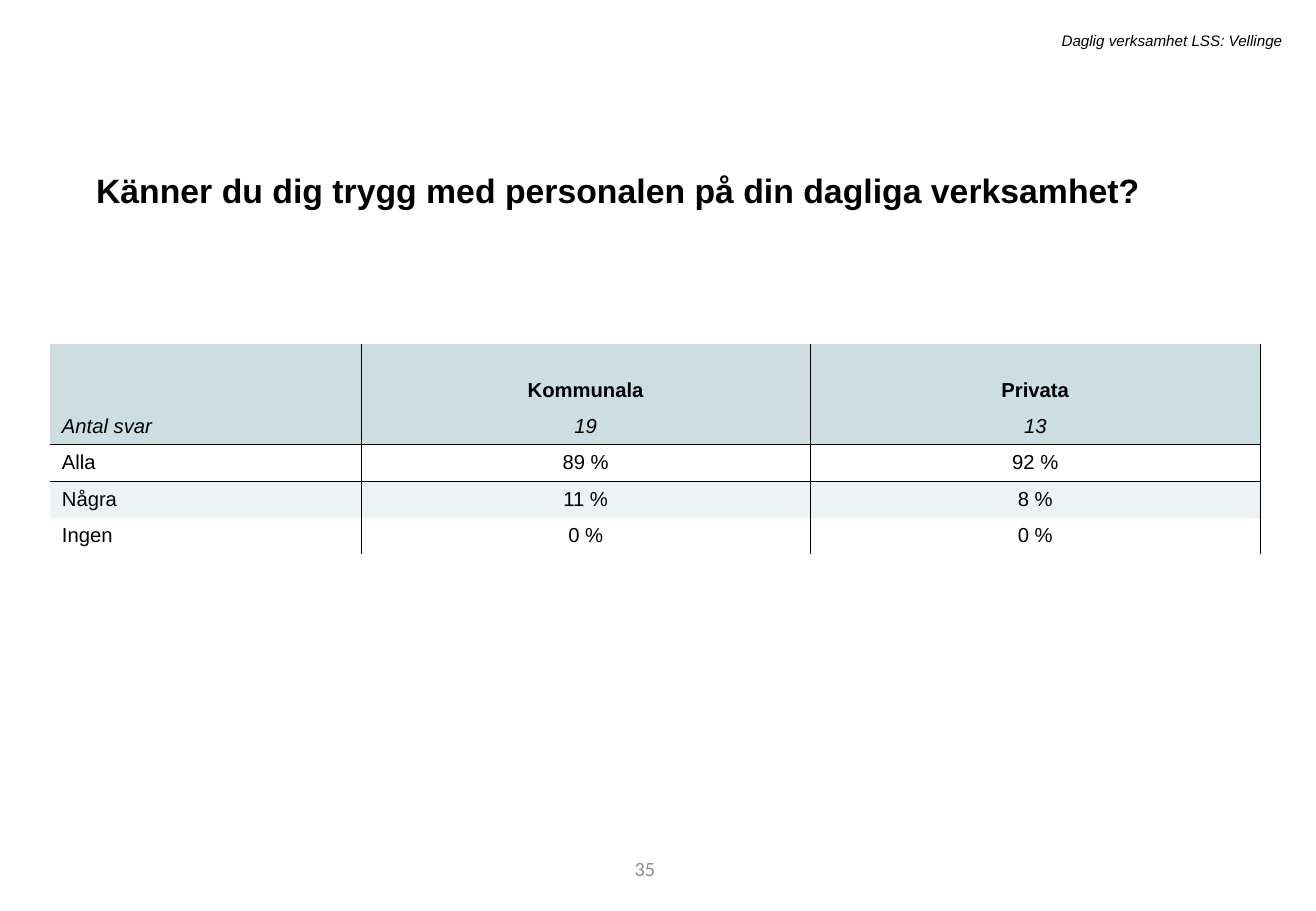
from lxml import etree
from pptx import Presentation
from pptx.dml.color import RGBColor
from pptx.enum.text import MSO_ANCHOR, PP_ALIGN
from pptx.oxml.ns import qn
from pptx.util import Inches, Pt

LEFT, CENTER, RIGHT = PP_ALIGN.LEFT, PP_ALIGN.CENTER, PP_ALIGN.RIGHT
TOP, MIDDLE, BOTTOM = MSO_ANCHOR.TOP, MSO_ANCHOR.MIDDLE, MSO_ANCHOR.BOTTOM
TITLE_ONLY = 5
PLAIN_TABLE_STYLE = "{2D5ABB26-0587-4C30-8999-92F81FD0307C}"
COLORS = {"text": "000000", "number": "8C8C8C", "header": "CCDEE1", "band": "EDF3F4"}

COLUMN_WIDTHS = [2.56, 3.7, 3.7]
ROW_HEIGHTS = [0.23, 0.3, 0.3, 0.3, 0.3, 0.3]
HEADING_ROW, COUNT_ROW = 1, 2
ROW_FILLS = ["header", "header", "header", None, "band", None]
ANSWERS = [
    ["", "", ""],
    ["", "Kommunala", "Privata"],
    ["Antal svar", "19", "13"],
    ["Alla", "89 %", "92 %"],
    ["Några", "11 %", "8 %"],
    ["Ingen", "0 %", "0 %"],
]


def add_span(para, text, size, font="Arial", color="text", bold=False, italic=False):
    """Add one formatted run to a paragraph."""
    span = para.add_run()
    span.text = text
    span.font.name = font
    span.font.size = Pt(size)
    span.font.bold = bold
    span.font.italic = italic
    span.font.color.rgb = RGBColor.from_string(COLORS[color])


def add_label(page, text, left, top, width, height, size, anchor=TOP, **style):
    """Add a right-aligned text box of one line."""
    box = page.shapes.add_textbox(Inches(left), Inches(top), Inches(width), Inches(height))
    box.text_frame.word_wrap = True
    box.text_frame.vertical_anchor = anchor
    para = box.text_frame.paragraphs[0]
    para.alignment = RIGHT
    add_span(para, text, size, **style)


def set_title(page, text):
    """Place the question in the title placeholder."""
    title = page.shapes.title
    title.left, title.top = Inches(0.69), Inches(1.28)
    title.width, title.height = Inches(9.4), Inches(0.47)
    title.text_frame.word_wrap = True
    title.text_frame.vertical_anchor = TOP
    para = title.text_frame.paragraphs[0]
    para.alignment = LEFT
    para.line_spacing = 1.2
    para.space_before = Pt(10)
    add_span(para, text, 20, bold=True)


def add_border(cell, side):
    """Draw a hairline on one side of a cell."""
    line = etree.SubElement(cell._tc.get_or_add_tcPr(), qn(f"a:ln{side}"), w=str(Pt(0.25)))
    fill = etree.SubElement(line, qn("a:solidFill"))
    etree.SubElement(fill, qn("a:srgbClr"), val=COLORS["text"])


def fill_cell(cell, text, row, column):
    """Format one table cell by its row and column."""
    if column > 0:
        add_border(cell, "L")
    add_border(cell, "R")
    if row == COUNT_ROW + 1:
        add_border(cell, "T")
    if row == COUNT_ROW:
        add_border(cell, "B")
    if ROW_FILLS[row]:
        cell.fill.solid()
        cell.fill.fore_color.rgb = RGBColor.from_string(COLORS[ROW_FILLS[row]])
    else:
        cell.fill.background()
    cell.margin_top = cell.margin_bottom = Inches(0.05 if text else 0)
    cell.vertical_anchor = BOTTOM if row == HEADING_ROW else MIDDLE
    para = cell.text_frame.paragraphs[0]
    para.alignment = CENTER if column else LEFT
    if text:
        add_span(para, text, 12, bold=row == HEADING_ROW, italic=row == COUNT_ROW)
    else:
        etree.SubElement(para._p, qn("a:endParaRPr"), sz="1200")


def add_answer_table(page):
    """Add the table of answers by type of provider."""
    frame = page.shapes.add_table(
        len(ANSWERS), len(COLUMN_WIDTHS), Inches(0.41), Inches(2.83),
        Inches(sum(COLUMN_WIDTHS)), Inches(sum(ROW_HEIGHTS)))
    table = frame.table
    table.first_row = table.horz_banding = False
    table._tbl.tblPr.find(qn("a:tableStyleId")).text = PLAIN_TABLE_STYLE
    for column, width in zip(table.columns, COLUMN_WIDTHS):
        column.width = Inches(width)
    for row, height in zip(table.rows, ROW_HEIGHTS):
        row.height = Inches(height)
    for row, texts in enumerate(ANSWERS):
        for column, text in enumerate(texts):
            fill_cell(table.cell(row, column), text, row, column)


def main():
    """Build and save the slide."""
    deck = Presentation()
    deck.slide_width, deck.slide_height = Inches(10.83), Inches(7.5)
    page = deck.slides.add_slide(deck.slide_layouts[TITLE_ONLY])
    add_label(page, "35", 3.05, 6.95, 2.44, 0.4, 12, MIDDLE, font="Calibri", color="number")
    set_title(page, "Känner du dig trygg med personalen på din dagliga verksamhet?")
    add_answer_table(page)
    add_label(page, "Daglig verksamhet LSS: Vellinge", 1.79, 0.21, 8.86, 0.25, 9, italic=True)
    deck.save("out.pptx")


if __name__ == "__main__":
    main()
